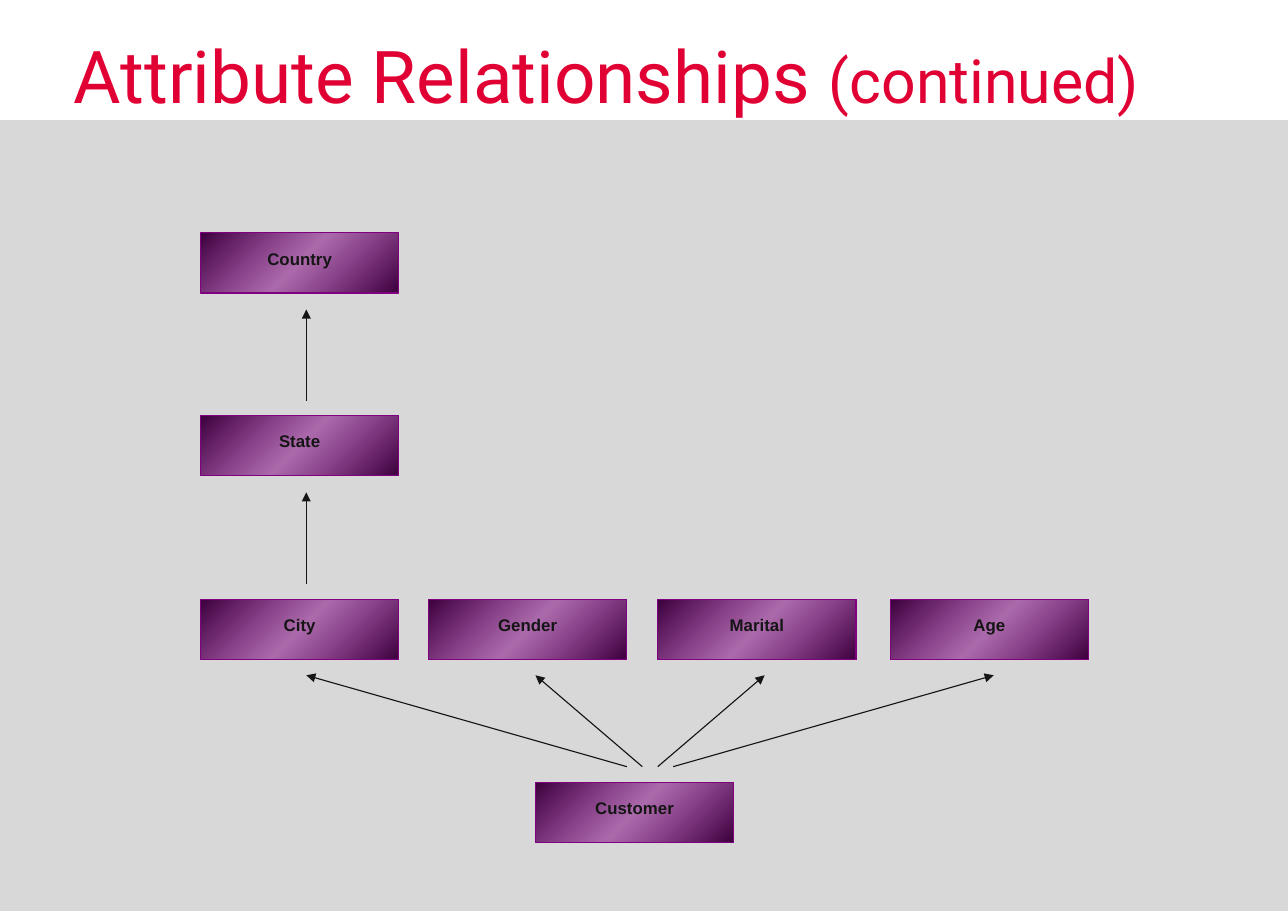
from lxml import etree
from pptx import Presentation
from pptx.dml.color import RGBColor
from pptx.enum.shapes import MSO_CONNECTOR, MSO_SHAPE
from pptx.enum.text import MSO_ANCHOR, MSO_AUTO_SIZE, PP_ALIGN
from pptx.oxml import parse_xml
from pptx.oxml.ns import nsdecls, qn
from pptx.util import Inches, Pt

RED = RGBColor(0xE0, 0x00, 0x34)
GREY = RGBColor(0xD8, 0xD8, 0xD8)
INK = RGBColor(0x15, 0x15, 0x15)
PURPLE = RGBColor(0x80, 0x00, 0x80)
DARK_PURPLE = RGBColor(0x3B, 0x00, 0x3B)

GRADIENT = f"""<a:gradFill {nsdecls('a')} rotWithShape="1"><a:gsLst>
<a:gs pos="0"><a:srgbClr val="{DARK_PURPLE}"/></a:gs>
<a:gs pos="50000"><a:srgbClr val="{PURPLE}"><a:alpha val="50000"/></a:srgbClr></a:gs>
<a:gs pos="100000"><a:srgbClr val="{DARK_PURPLE}"/></a:gs>
</a:gsLst><a:lin ang="2700000" scaled="0"/></a:gradFill>"""


def add_attribute(name, left, top):
    box = slide.shapes.add_shape(
        MSO_SHAPE.RECTANGLE, Inches(left), Inches(top), Inches(1.8), Inches(0.55))
    box.shadow.inherit = False
    box.fill.background()
    no_fill = box.element.spPr.find(qn("a:noFill"))
    box.element.spPr.replace(no_fill, parse_xml(GRADIENT))
    box.line.color.rgb = PURPLE
    box.line.width = Pt(0.75)
    frame = box.text_frame
    frame.vertical_anchor = MSO_ANCHOR.MIDDLE
    frame.margin_top = Inches(0.02)
    frame.margin_bottom = Inches(0.1)
    label = frame.paragraphs[0]
    label.text = name
    label.alignment = PP_ALIGN.CENTER
    label.font.name = "Arial"
    label.font.size = Pt(11)
    label.font.bold = True
    label.font.color.rgb = INK


def add_arrow(start_x, start_y, end_x, end_y):
    arrow = slide.shapes.add_connector(
        MSO_CONNECTOR.STRAIGHT,
        Inches(start_x), Inches(start_y), Inches(end_x), Inches(end_y))
    arrow.line.color.rgb = INK
    arrow.line.width = Pt(0.75)
    etree.SubElement(arrow.line._get_or_add_ln(), qn("a:tailEnd"), type="triangle")
    etree.SubElement(arrow.element.spPr, qn("a:effectLst"))


prs = Presentation()
prs.slide_width = Inches(11.69)
prs.slide_height = Inches(8.27)
slide = prs.slides.add_slide(prs.slide_layouts[5])

title = slide.shapes.title
title.left, title.top = Inches(0.33), Inches(0.28)
title.width, title.height = Inches(10.11), Inches(0.8)
title.text_frame.auto_size = MSO_AUTO_SIZE.NONE
title.text_frame.vertical_anchor = MSO_ANCHOR.MIDDLE
heading = title.text_frame.paragraphs[0]
heading.alignment = PP_ALIGN.RIGHT
heading.font.name = "Roboto"
heading.font.color.rgb = RED
for words, size in (("Attribute Relationships ", 47.6), ("(continued)", 39.7)):
    run = heading.add_run()
    run.text = words
    run.font.size = Pt(size)

backdrop = slide.shapes.add_shape(
    MSO_SHAPE.RECTANGLE, 0, Inches(1.09), prs.slide_width, Inches(7.18))
backdrop.shadow.inherit = False
backdrop.fill.solid()
backdrop.fill.fore_color.rgb = GREY
backdrop.line.fill.background()

# Geography hierarchy above City
for level, name in enumerate(("Country", "State")):
    top = 2.11 + 1.66 * level
    add_attribute(name, 1.82, top)
    add_arrow(2.78, top + 1.53, 2.78, top + 0.7)

# Attributes related directly to Customer
add_attribute("Customer", 4.86, 7.1)
customer_attributes = (("City", 1.82), ("Gender", 3.89), ("Marital", 5.97), ("Age", 8.08))
for column, (name, left) in enumerate(customer_attributes):
    add_attribute(name, left, 5.44)
    add_arrow(5.69 + 0.14 * column, 6.96, 2.78 + 2.08 * column, 6.13)

prs.save("out.pptx")
